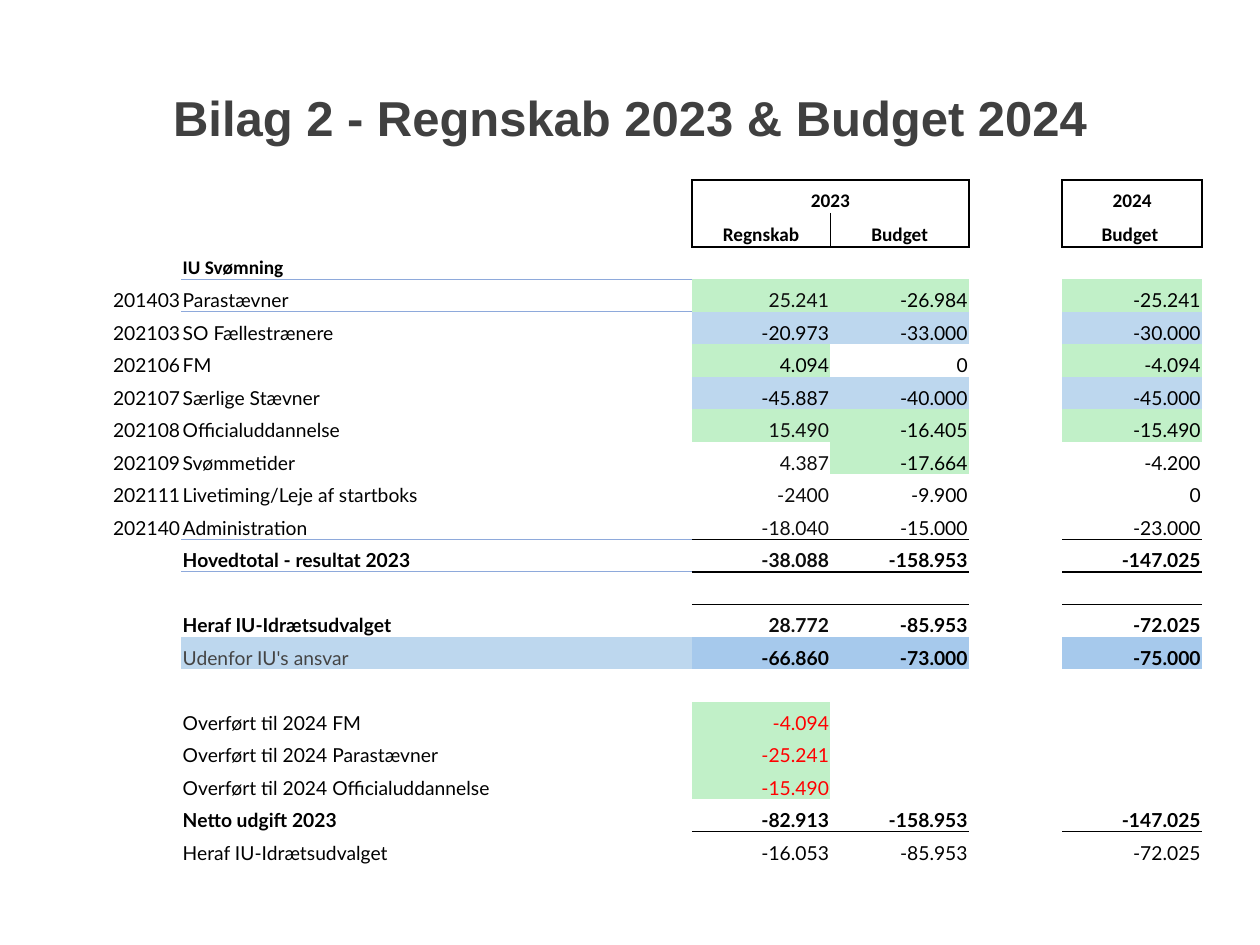
from lxml import etree
from pptx import Presentation
from pptx import util as u
from pptx.dml.color import RGBColor
from pptx.enum import text as t
from pptx.oxml import ns

BLACK = RGBColor(0x00, 0x00, 0x00)
INK = RGBColor(0x0D, 0x0D, 0x0D)
GREY = RGBColor(0x40, 0x40, 0x40)
SLATE = RGBColor(0x44, 0x44, 0x44)
RED = RGBColor(0xFF, 0x00, 0x00)
RULE = RGBColor(0x8E, 0xA9, 0xDB)
TINTS = {
    "g": RGBColor(0xC1, 0xF0, 0xC8),
    "b": RGBColor(0xBD, 0xD7, 0xEE),
    "a": RGBColor(0xA6, 0xC9, 0xEC),
}
LEFT, MID, RIGHT = t.PP_ALIGN.LEFT, t.PP_ALIGN.CENTER, t.PP_ALIGN.RIGHT
NO_STYLE = "{2D5ABB26-0587-4C30-8999-92F81FD0307C}"


def write(frame, words, size=11, font="Lato", color=BLACK, bold=False, align=LEFT):
    par = frame.paragraphs[0]
    par.alignment = align
    if not words:  # an empty cell keeps its row low
        etree.SubElement(par._p, ns.qn("a:endParaRPr"), sz=str(size * 100))
        return
    run = par.add_run()
    run.text = words
    run.font.size = u.Pt(size)
    run.font.name = font
    run.font.bold = bold
    run.font.color.rgb = color


def edge(cell, sides, color=BLACK, width=1):
    props = cell._tc.get_or_add_tcPr()
    for spot, side in enumerate(sides):  # sides come in the order L R T B
        line = etree.Element(ns.qn("a:ln" + side), w=str(u.Pt(width)))
        fill = etree.SubElement(line, ns.qn("a:solidFill"))
        etree.SubElement(fill, ns.qn("a:srgbClr"), val=str(color))
        props.insert(spot, line)


deck = Presentation()
deck.slide_width, deck.slide_height = u.Inches(10), u.Inches(7.5)
slide = deck.slides.add_slide(deck.slide_layouts[6])

# Title
wide, high = deck.slide_width, deck.slide_height
box = slide.shapes.add_textbox(int(wide * 0.05), int(high * 0.04),
                               int(wide * 0.9), int(high / 6))
box.text_frame.word_wrap = True
box.text_frame.vertical_anchor = t.MSO_ANCHOR.MIDDLE
write(box.text_frame, "Bilag 2 - Regnskab 2023 & Budget 2024",
      size=28, font="Arial", color=GREY, bold=True, align=MID)

# Account, label, result 2023, budget 2023, budget 2024, tints of the last four
rows = [
    ("", "", "2023", "", "2024", "----"),
    ("", "", "Regnskab", "Budget", "Budget ", "----"),
    ("", "IU Svømning", "", "", "", "----"),
    ("201403", "Parastævner", "25.241", "-26.984", "-25.241", "-ggg"),
    ("202103", "SO Fællestrænere", "-20.973", "-33.000", "-30.000", "-bbb"),
    ("202106", "FM", "4.094", "0", "-4.094", "-g-g"),
    ("202107", "Særlige Stævner", "-45.887", "-40.000", "-45.000", "-bbb"),
    ("202108", "Officialuddannelse", "15.490", "-16.405", "-15.490", "-ggg"),
    ("202109", "Svømmetider", "4.387", "-17.664", "-4.200", "--g-"),
    ("202111", "Livetiming/Leje af startboks", "-2400", "-9.900", "0", "----"),
    ("202140", "Administration", "-18.040", "-15.000", "-23.000", "----"),
    ("", "Hovedtotal - resultat 2023", "-38.088", "-158.953", "-147.025", "----"),
    ("", "", "", "", "", "----"),
    ("", "Heraf IU-Idrætsudvalget", "28.772", "-85.953", "-72.025", "----"),
    ("", "Udenfor IU's ansvar", "-66.860", "-73.000", "-75.000", "baaa"),
    ("", "", "", "", "", "----"),
    ("", "Overført til 2024 FM", "-4.094", "", "", "-g--"),
    ("", "Overført til 2024 Parastævner", "-25.241", "", "", "-g--"),
    ("", "Overført til 2024 Officialuddannelse", "-15.490", "", "", "-g--"),
    ("", "Netto udgift 2023", "-82.913", "-158.953", "-147.025", "----"),
    ("", "Heraf IU-Idrætsudvalget", "-16.053", "-85.953", "-72.025", "----"),
]
HEAD, TOTAL, OUTER, NET = 2, 11, 14, 19
BOLD = {0, 1, 2, TOTAL, 13, OUTER, NET}
DARK = {3, 7, 8, 9, 10, 11, 13}
CARRY = {16, 17, 18}

# Table grid
cols = [0.95, 4.05, 1.1, 1.1, 0.74, 1.11]
tall = [0.26, 0.27] + [4.9 / 19] * 19
frame = slide.shapes.add_table(len(rows), len(cols), u.Inches(0.49), u.Inches(1.43),
                               u.Inches(sum(cols)), u.Inches(sum(tall)))
grid = frame.table
grid.first_row = grid.horz_banding = False
grid._tbl.tblPr.find(ns.qn("a:tableStyleId")).text = NO_STYLE
for col, size in zip(grid.columns, cols):
    col.width = u.Inches(size)
for row, size in zip(grid.rows, tall):
    row.height = u.Inches(size)

# Cells
for r, (code, label, real, plan, next_, tint) in enumerate(rows):
    words = [code, label, real, plan, "", next_]
    tints = "-" + tint[:3] + "-" + tint[3]
    for c, word in enumerate(words):
        cell = grid.cell(r, c)
        cell.margin_left = cell.margin_right = cell.margin_top = u.Inches(0.01)
        cell.margin_bottom = 0
        cell.vertical_anchor = t.MSO_ANCHOR.BOTTOM
        if tints[c] in TINTS:
            cell.fill.solid()
            cell.fill.fore_color.rgb = TINTS[tints[c]]
        else:
            cell.fill.background()
        color = BLACK
        if c == 2 and r in CARRY:
            color = RED
        elif c == 2 and r in DARK:
            color = INK
        elif c == 1 and r == OUTER:
            color = SLATE
        write(cell.text_frame, word, color=color,
              font="Calibri" if r <= HEAD else "Lato",
              bold=r in BOLD and not (r == OUTER and c == 1),
              align=LEFT if c == 1 else MID if r < HEAD else RIGHT)
grid.cell(0, 2).merge(grid.cell(0, 3))

# Frames round the year headings
for c, top, low in ((2, "LRT", "LB"), (3, "RT", "RB"), (5, "LRT", "LRB")):
    edge(grid.cell(0, c), top.split() and list(top))
    edge(grid.cell(1, c), list(low))

# Rules under the section, the sums and the net cost
for r in (HEAD, TOTAL - 1):
    edge(grid.cell(r, 1), "B", RULE, 0.5)
    edge(grid.cell(r + 1, 1), "T", RULE, 0.5)
for c in (2, 3, 5):
    edge(grid.cell(TOTAL - 1, c), "B")
    edge(grid.cell(TOTAL, c), "TB")
    edge(grid.cell(TOTAL + 1, c), "T")
    edge(grid.cell(NET, c), "B", width=0.5)
    edge(grid.cell(NET + 1, c), "T", width=0.5)

deck.save("out.pptx")
